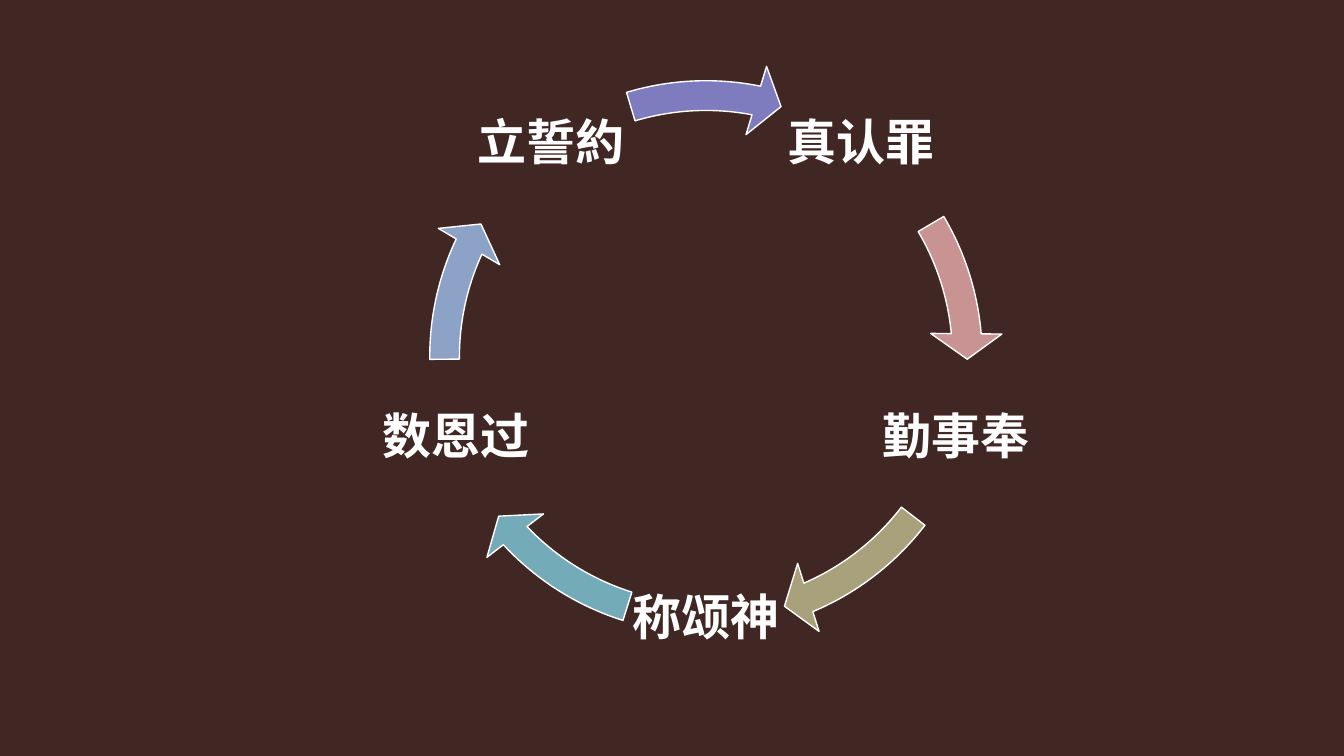
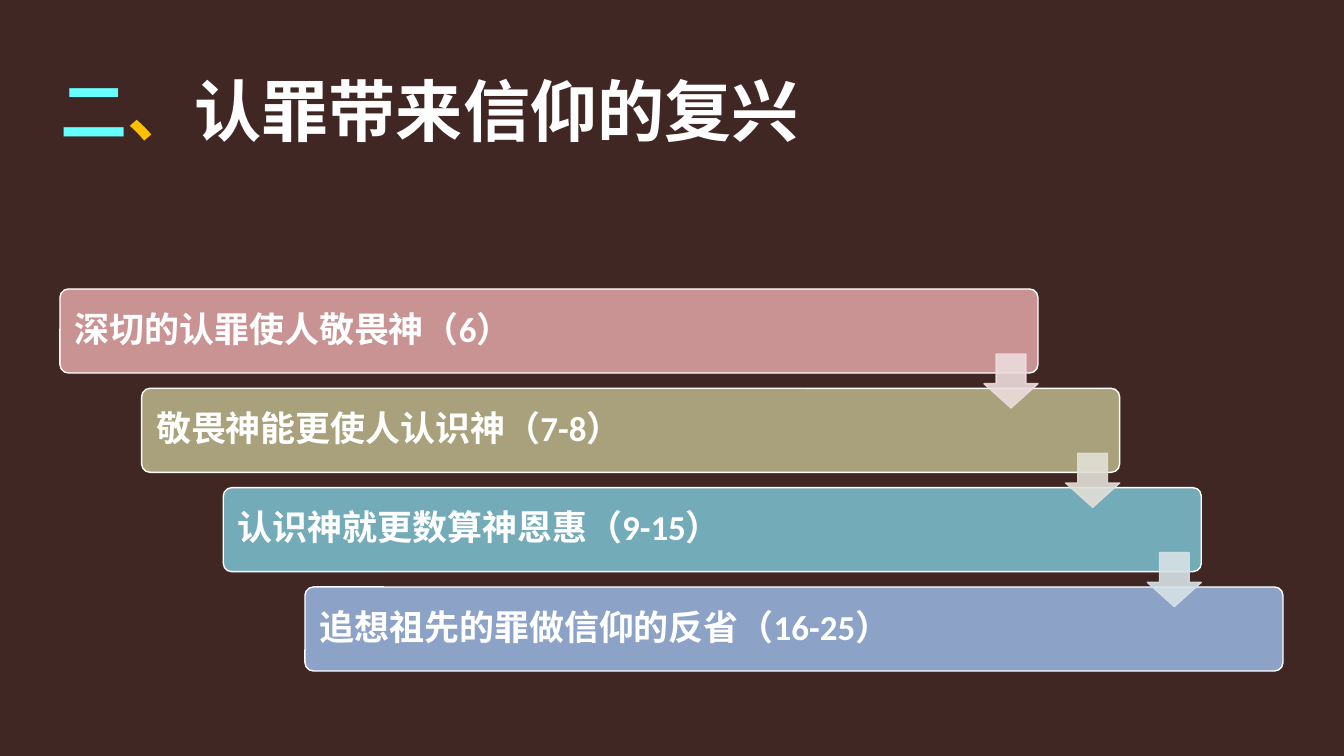
from dataclasses import dataclass
from math import cos, pi, sin

from lxml.etree import SubElement
from pptx import Presentation
from pptx.dml.color import RGBColor
from pptx.enum.shapes import MSO_SHAPE as Preset
from pptx.enum.text import MSO_ANCHOR as Anchor, PP_ALIGN as Align
from pptx.oxml.ns import qn
from pptx.util import Pt

SLIDE_WIDTH, SLIDE_HEIGHT = 1344, 756
EMU_PER_PX = 12192000 / SLIDE_WIDTH


@dataclass(frozen=True)
class Theme:
    font: str = "Calibri"
    background: str = "412724"
    text: str = "FFFFFF"
    number: str = "66FFFF"
    comma: str = "FFC000"
    rose: str = "CA9393"
    olive: str = "A9A17B"
    teal: str = "74ABB9"
    blue: str = "8CA2C7"
    violet: str = "7E7BBE"
    pale_rose: str = "ECDCDC"
    pale_olive: str = "E2E0D7"
    pale_teal: str = "D6E2E6"
    title_size: int = 48
    label_size: int = 35
    bar_size: int = 25


THEME = Theme()


def px(*lengths):
    return [round(length * EMU_PER_PX) for length in lengths]


def rgb(color):
    return RGBColor.from_string(color)


def set_opacity(color_format_parent, percent):
    for color in color_format_parent.iter(qn("a:srgbClr")):
        SubElement(color, qn("a:alpha"), val=str(percent * 1000))


def add_preset(slide, preset, box, adjustments, fill, line):
    shape = slide.shapes.add_shape(preset, *px(*box))
    shape.shadow.inherit = False
    for index, value in enumerate(adjustments):
        shape.adjustments[index] = value
    shape.fill.solid()
    shape.fill.fore_color.rgb = rgb(fill)
    shape.line.color.rgb = rgb(line)
    shape.line.width = Pt(1)
    return shape


def set_margins(frame, margin):
    frame.margin_left, frame.margin_top, frame.margin_right, frame.margin_bottom = px(*[margin] * 4)
    frame.vertical_anchor = Anchor.MIDDLE
    frame.word_wrap = True


def style_paragraph(paragraph, size, align, color=None):
    paragraph.alignment = align
    paragraph.line_spacing = 0.9
    font = paragraph.font
    font.name, font.size, font.bold = THEME.font, Pt(size), True
    if color:
        font.color.rgb = rgb(color)


def write_text(shape, text, size, align, margin):
    frame = shape.text_frame
    set_margins(frame, margin)
    frame.text = text
    style_paragraph(frame.paragraphs[0], size, align, THEME.text)


def add_title(slide, box, parts):
    title = slide.shapes.title
    title.left, title.top, title.width, title.height = px(*box)
    set_margins(title.text_frame, 0)
    paragraph = title.text_frame.paragraphs[0]
    style_paragraph(paragraph, THEME.title_size, Align.LEFT)
    for text, color in parts:
        run = paragraph.add_run()
        run.text = text
        run.font.color.rgb = rgb(color)


def add_cycle(slide, box, steps):
    left, top, width, height = box
    center_x, center_y = left + width / 2, top + height / 2
    radius, label_side = 263, 158
    for index, (label, color, start, end) in enumerate(steps):
        angle = 2 * pi * (index + 0.5) / len(steps)
        label_x = center_x + radius * sin(angle) - label_side / 2
        label_y = center_y - radius * cos(angle) - label_side / 2
        text_box = slide.shapes.add_textbox(*px(label_x, label_y, label_side, label_side))
        write_text(text_box, label, THEME.label_size, Align.CENTER, 5)
        degrees = [value * 0.6 for value in (5.59, end, start)]
        add_preset(slide, Preset.CIRCULAR_ARROW, box, [0.05, *degrees, 0.06], color, THEME.text)


def add_staircase(slide, box, steps, arrow_colors):
    left, top, width, height = box
    bar_width, bar_height, arrow_side, arrow_drop = 978, 84, 54, 65
    step_x = (width - bar_width) / (len(steps) - 1)
    step_y = (height - bar_height) / (len(steps) - 1)
    for index, (text, color) in enumerate(steps):
        bar_box = left + index * step_x, top + index * step_y, bar_width, bar_height
        bar = add_preset(slide, Preset.ROUNDED_RECTANGLE, bar_box, [0.1], color, THEME.text)
        write_text(bar, text, THEME.bar_size, Align.LEFT, 12)
    for index, color in enumerate(arrow_colors):
        arrow_left = left + index * step_x + bar_width - arrow_side
        arrow_top = top + index * step_y + arrow_drop
        arrow_box = arrow_left, arrow_top, arrow_side, arrow_side
        arrow = add_preset(slide, Preset.DOWN_ARROW, arrow_box, [0.55, 0.45], color, color)
        set_opacity(arrow.element.spPr, 90)


def build_cycle_slide(presentation):
    slide = presentation.slides.add_slide(presentation.slide_layouts[6])
    add_cycle(slide, (409, 60, 594, 594), [
        ("真认罪", THEME.rose, 329.42, 354.9),
        ("勤事奉", THEME.olive, 37.54, 66.93),
        ("称颂神", THEME.teal, 107.48, 136.87),
        ("数恩过", THEME.blue, 179.5, 204.99),
        ("立誓約", THEME.violet, 253.29, 281.11),
    ])


def build_staircase_slide(presentation):
    slide = presentation.slides.add_slide(presentation.slide_layouts[5])
    add_title(slide, (60, 60, 806, 109), [
        ("二", THEME.number),
        ("、", THEME.comma),
        ("认罪带来信仰的复兴", THEME.text),
    ])
    add_staircase(slide, (60, 289, 1223, 382), [
        ("深切的认罪使人敬畏神（6）", THEME.rose),
        ("敬畏神能更使人认识神（7-8）", THEME.olive),
        ("认识神就更数算神恩惠（9-15）", THEME.teal),
        ("追想祖先的罪做信仰的反省（16-25）", THEME.blue),
    ], [THEME.pale_rose, THEME.pale_olive, THEME.pale_teal])


def main():
    presentation = Presentation()
    presentation.slide_width, presentation.slide_height = px(SLIDE_WIDTH, SLIDE_HEIGHT)
    background = presentation.slide_master.background.fill
    background.solid()
    background.fore_color.rgb = rgb(THEME.background)
    build_cycle_slide(presentation)
    build_staircase_slide(presentation)
    presentation.save("out.pptx")


if __name__ == "__main__":
    main()
